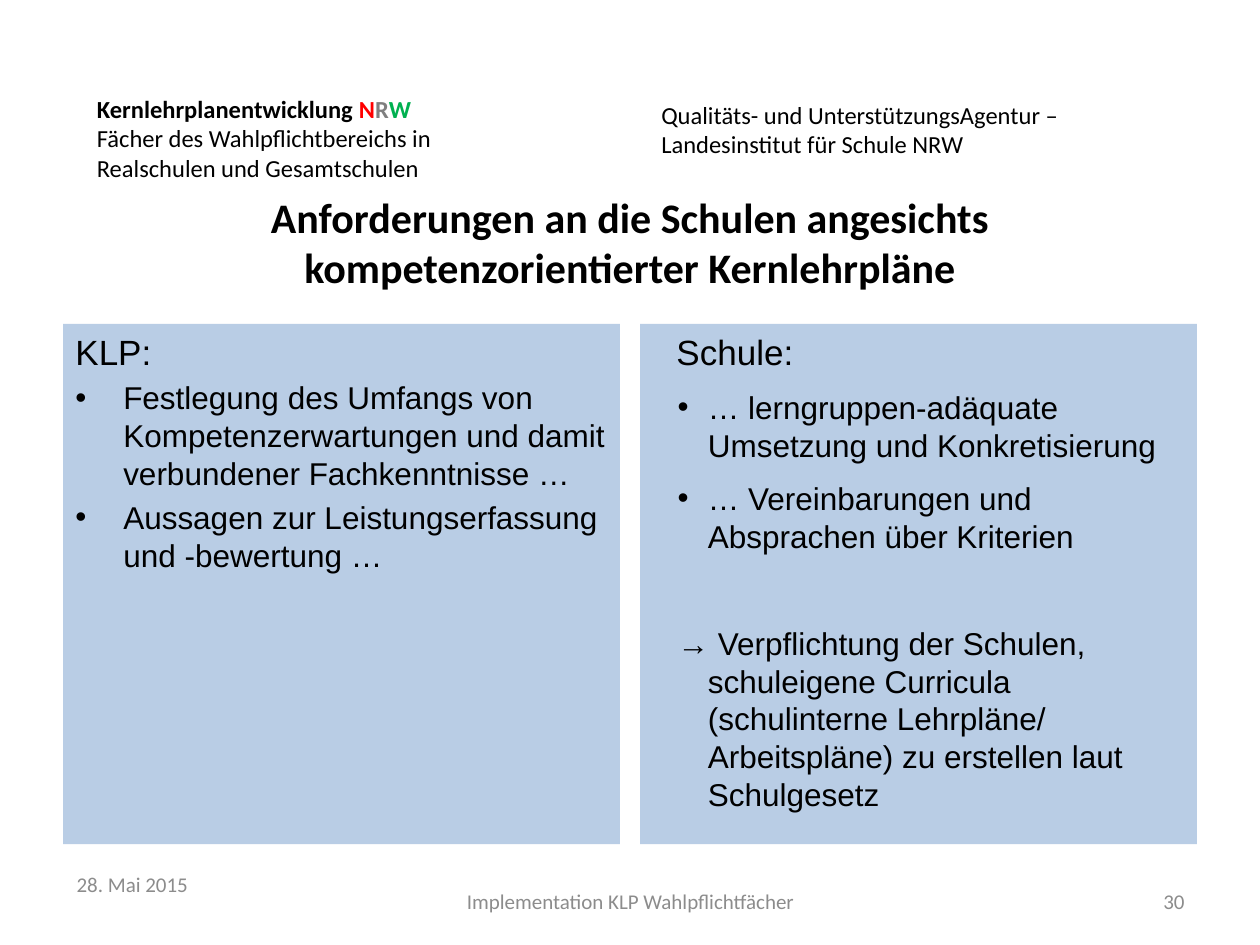
import pptx
import pptx.util
import pptx.dml.color
import pptx.enum.shapes
import pptx.enum.text
from lxml import etree
from pptx.oxml.ns import qn

Inches = pptx.util.Inches
Pt = pptx.util.Pt
ALIGN = pptx.enum.text.PP_ALIGN
ANCHOR = pptx.enum.text.MSO_ANCHOR

COLORS = {
    "text": "000000",
    "red": "FF0000",
    "gray": "7F7F7F",
    "green": "00B050",
    "panel": "B9CDE5",
    "footer": "8C8C8C",
}


def rgb(name):
    return pptx.dml.color.RGBColor.from_string(COLORS[name])


def write_paragraph(paragraph, text, size=18, font="Calibri", color="text", bold=False,
                    align=ALIGN.LEFT, before=0, left=0, hanging=0, bullet=None):
    """Fill a paragraph; text is a string or a list of (text, format overrides)."""
    properties = paragraph._p.get_or_add_pPr()
    properties.set("marL", str(Inches(left)))
    properties.set("indent", str(-Inches(hanging)))
    if bullet:
        bullet_font = etree.SubElement(properties, qn("a:buFont"))
        bullet_font.set("typeface", font)
        etree.SubElement(properties, qn("a:buChar")).set("char", bullet)
    else:
        etree.SubElement(properties, qn("a:buNone"))
    paragraph.alignment = align
    paragraph.space_before = Pt(before)
    for part, changes in [(text, {})] if isinstance(text, str) else text:
        run = paragraph.add_run()
        run.text = part
        run.font.name = font
        run.font.size = Pt(size)
        run.font.bold = changes.get("bold", bold)
        run.font.color.rgb = rgb(changes.get("color", color))


class SlideBuilder:
    """Holds the body style and the slide being built."""

    body_font = "Arial"
    heading_size = 20
    panel_top, panel_width, panel_height = 2.57, 4.42, 4.13

    def __init__(self, slide):
        self.slide = slide

    def fill_frame(self, frame, paragraphs, anchor):
        frame.word_wrap = True
        frame.vertical_anchor = anchor
        for index, (text, style) in enumerate(paragraphs):
            paragraph = frame.add_paragraph() if index else frame.paragraphs[0]
            write_paragraph(paragraph, text, **style)

    def text(self, left, top, width, height, lines, anchor=ANCHOR.MIDDLE, **style):
        box = self.slide.shapes.add_textbox(
            Inches(left), Inches(top), Inches(width), Inches(height))
        self.fill_frame(box.text_frame, [(line, style) for line in lines], anchor)

    def panel(self, left, heading, items, heading_left=0):
        """Draw a filled column with a heading and (text, style) items."""
        column = self.slide.shapes.add_shape(
            pptx.enum.shapes.MSO_SHAPE.RECTANGLE, Inches(left), Inches(self.panel_top),
            Inches(self.panel_width), Inches(self.panel_height))
        column.shadow.inherit = False
        column.fill.solid()
        column.fill.fore_color.rgb = rgb("panel")
        column.line.fill.background()
        paragraphs = [(heading, {"size": self.heading_size, "left": heading_left})] + items
        self.fill_frame(
            column.text_frame,
            [(text, {"font": self.body_font, **style}) for text, style in paragraphs],
            ANCHOR.TOP)

    def footer(self, left, top, width, text, align):
        self.text(left, top, width, 0.4, [text], size=12, color="footer", align=align)


def main():
    presentation = pptx.Presentation()
    presentation.slide_width = Inches(10)
    presentation.slide_height = Inches(7.5)
    builder = SlideBuilder(presentation.slides.add_slide(presentation.slide_layouts[6]))

    project_name = [
        ("Kernlehrplanentwicklung ", {"bold": True}),
        ("N", {"bold": True, "color": "red"}),
        ("R", {"bold": True, "color": "gray"}),
        ("W", {"bold": True, "color": "green"}),
    ]
    builder.text(0.67, 0.47, 3.39, 1.25, [
        project_name,
        "Fächer des Wahlpflichtbereichs in",
        "Realschulen und Gesamtschulen",
    ], size=14)
    builder.text(5.15, 0.4, 3.4, 1.25, [
        "Qualitäts- und UnterstützungsAgentur –",
        "Landesinstitut für Schule NRW",
    ], size=14)
    builder.text(0.51, 1.47, 8.98, 0.94, [
        "Anforderungen an die Schulen angesichts kompetenzorientierter Kernlehrpläne",
    ], anchor=ANCHOR.TOP, size=24, bold=True, align=ALIGN.CENTER)

    curriculum_item = {"left": 0.38, "hanging": 0.38, "before": 3.6, "bullet": "•"}
    builder.panel(0.5, "KLP:", [
        ("Festlegung des Umfangs von Kompetenzerwartungen und damit verbundener "
         "Fachkenntnisse …", curriculum_item),
        ("Aussagen zur Leistungserfassung und -bewertung …", curriculum_item),
    ])

    school_item = {"left": 0.44, "hanging": 0.24, "before": 9, "bullet": "•"}
    conclusion = {**school_item, "before": 39.5, "bullet": None}
    builder.panel(5.08, "Schule:", [
        ("… lerngruppen-adäquate Umsetzung und Konkretisierung", school_item),
        ("… Vereinbarungen und Absprachen über Kriterien", school_item),
        ("→ Verpflichtung der Schulen, schuleigene Curricula (schulinterne Lehrpläne/ "
         "Arbeitspläne) zu erstellen laut Schulgesetz", conclusion),
    ], heading_left=0.19)

    builder.footer(7.17, 6.95, 2.33, "30", ALIGN.RIGHT)
    builder.footer(3.42, 6.95, 3.17, "Implementation KLP Wahlpflichtfächer", ALIGN.CENTER)
    builder.footer(0.51, 6.82, 2.33, "28. Mai 2015", ALIGN.LEFT)

    presentation.save("out.pptx")


if __name__ == "__main__":
    main()
